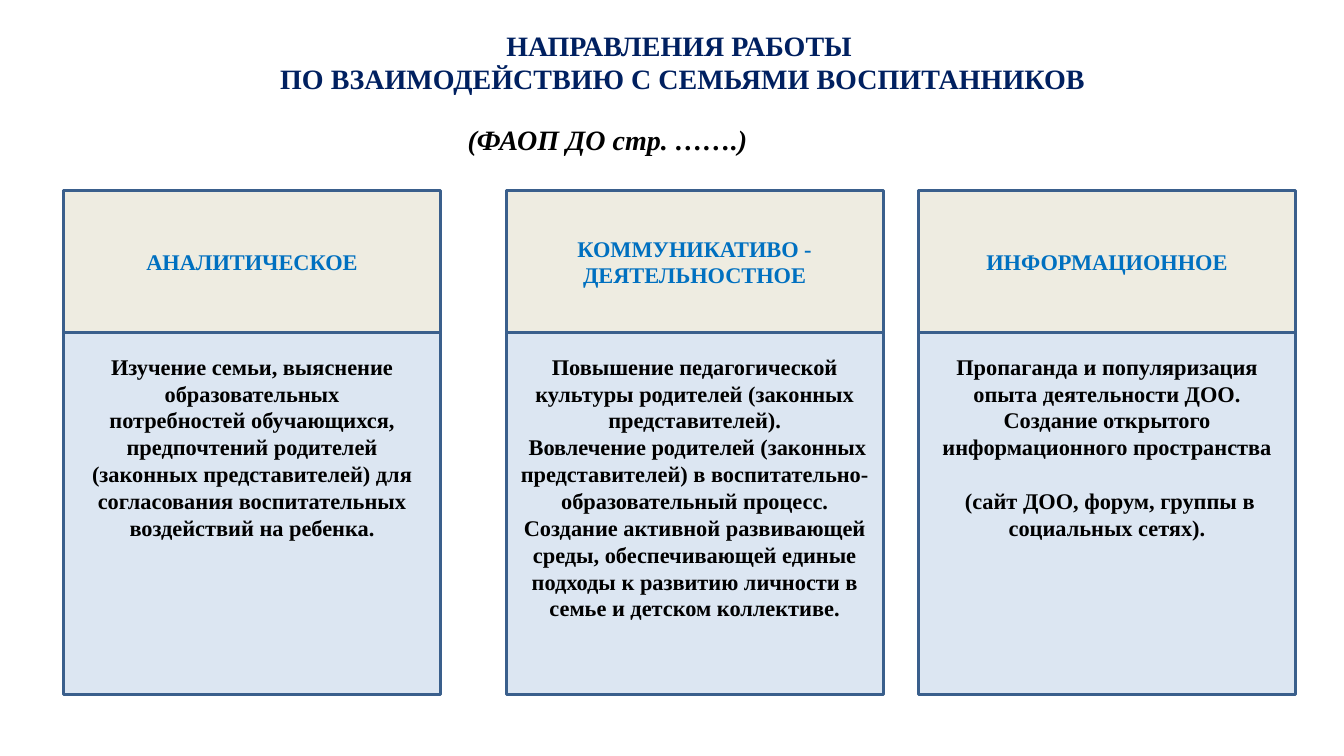
from pptx import Presentation
from pptx.dml.color import RGBColor
from pptx.enum.shapes import MSO_SHAPE
from pptx.enum.text import MSO_ANCHOR, PP_ALIGN
from pptx.util import Inches, Pt

RECT = MSO_SHAPE.RECTANGLE
TOP, MIDDLE = MSO_ANCHOR.TOP, MSO_ANCHOR.MIDDLE
LEFT, CENTER = PP_ALIGN.LEFT, PP_ALIGN.CENTER

COLORS = {
    "navy": "002060", "black": "000000", "blue": "0070C0",
    "cream": "EEECE1", "pale": "DCE6F2", "edge": "3A5F8C",
}
FONT = "Times New Roman"
GAP = Pt(19)  # one empty line of body text

WIDTH, HEAD_TOP, HEAD_H, BODY_H = 3.74, 1.89, 1.41, 3.59
COLUMNS = [
    (0.63, "АНАЛИТИЧЕСКОЕ", [
        "Изучение семьи, выяснение образовательных",
        "потребностей обучающихся, предпочтений родителей (законных "
        "представителей) для согласования воспитательных воздействий на ребенка.",
    ]),
    (5.02, "КОММУНИКАТИВО - ДЕЯТЕЛЬНОСТНОЕ", [
        "Повышение педагогической культуры родителей (законных представителей).",
        " Вовлечение родителей (законных представителей) в "
        "воспитательно-образовательный процесс. Создание активной развивающей "
        "среды, обеспечивающей единые подходы к развитию личности в семье и "
        "детском коллективе.",
    ]),
    (9.11, "ИНФОРМАЦИОННОЕ", [
        "Пропаганда и популяризация опыта деятельности ДОО.",
        "Создание открытого информационного пространства",
        " (сайт ДОО, форум, группы в социальных сетях).",
    ]),
]


class Board:
    def __init__(self, slide):
        self.slide = slide

    def color(self, name):
        return RGBColor.from_string(COLORS[name])

    def fill_text(self, frame, lines, size, color, align=CENTER, italic=False):
        """Fill a text frame with one bold paragraph per line."""
        frame.text = "\n".join(lines)
        for para in frame.paragraphs:
            para.alignment = align
            for run in para.runs:
                font = run.font
                font.name, font.size = FONT, Pt(size)
                font.bold, font.italic = True, italic
                font.color.rgb = self.color(color)
        return frame.paragraphs

    def label(self, place, lines, wrap=True, **style):
        box = self.slide.shapes.add_textbox(*map(Inches, place))
        box.text_frame.word_wrap = wrap
        return self.fill_text(box.text_frame, lines, 20, **style)

    def panel(self, place, lines, fill, color, anchor, inset=0.05):
        box = self.slide.shapes.add_shape(RECT, *map(Inches, place))
        box.shadow.inherit = False
        box.fill.solid()
        box.fill.fore_color.rgb = self.color(fill)
        box.line.color.rgb = self.color("edge")
        box.line.width = Pt(2)
        frame = box.text_frame
        frame.word_wrap = True
        frame.vertical_anchor = anchor
        frame.margin_top = Inches(inset)
        return self.fill_text(frame, lines, 16, color)


def main():
    deck = Presentation()
    deck.slide_width, deck.slide_height = Inches(13.33), Inches(7.5)
    board = Board(deck.slides.add_slide(deck.slide_layouts[6]))

    title = board.label(
        (0.12, 0.23, 12.73, 0.77),
        ["НАПРАВЛЕНИЯ РАБОТЫ", " ПО ВЗАИМОДЕЙСТВИЮ С СЕМЬЯМИ ВОСПИТАННИКОВ"],
        color="navy")
    for para in title:
        para._p.get_or_add_pPr().set("indent", str(Inches(0.5)))
    board.label((4.54, 1.17, 3, 0.44), ["(ФАОП ДО стр. …….)"], wrap=False,
                color="black", align=LEFT, italic=True)

    for left, head, body in COLUMNS:
        board.panel((left, HEAD_TOP, WIDTH, HEAD_H), [head],
                    "cream", "blue", MIDDLE)
        paras = board.panel((left, HEAD_TOP + HEAD_H, WIDTH, BODY_H), body,
                            "pale", "black", TOP, inset=0.2)
        for para in paras[2:]:
            para.space_before = GAP

    deck.save("out.pptx")


if __name__ == "__main__":
    main()
